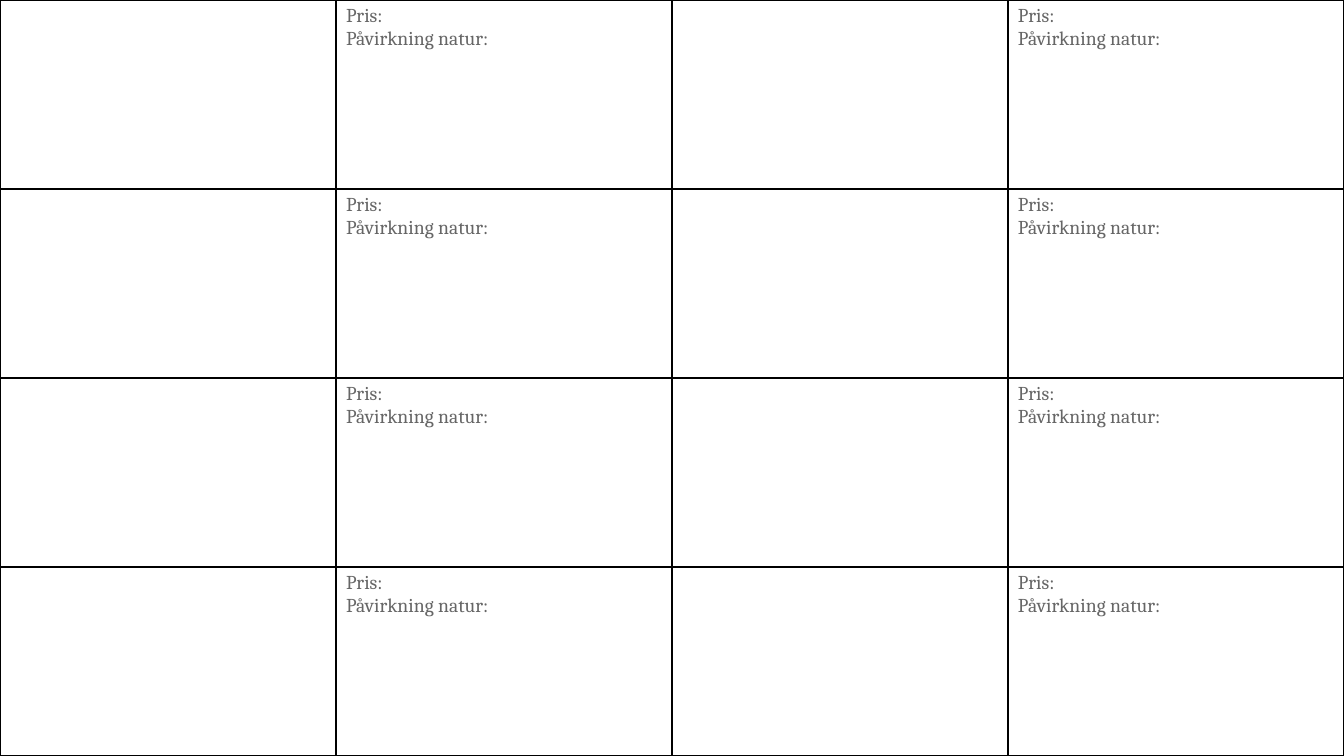
from lxml import etree
from pptx import Presentation
from pptx.dml.color import RGBColor
from pptx.oxml.ns import qn
from pptx.util import Emu, Pt

LABELS = ["Pris:", "Påvirkning natur:"]
ROWS = 4
COLUMNS = 4
LABEL_COLUMNS = (1, 3)

PAGE_WIDTH, PAGE_HEIGHT = 1344, 756
FONT = "Cambria"
FONT_SIZE = Pt(14)
BORDER_WIDTH = Pt(1)
GREY = RGBColor(0x66, 0x66, 0x66)
BLACK = RGBColor(0, 0, 0)
BLANK_LAYOUT = 6


def px(length):
    return Emu(round(length * 914400 / 100.8))


def add_borders(cell):
    properties = cell._tc.get_or_add_tcPr()
    for side in ("a:lnL", "a:lnR", "a:lnT", "a:lnB"):
        line = etree.SubElement(properties, qn(side), w=str(BORDER_WIDTH))
        fill = etree.SubElement(line, qn("a:solidFill"))
        etree.SubElement(fill, qn("a:srgbClr"), val=str(BLACK))


def write_labels(cell):
    cell.text_frame.text = "\n".join(LABELS)
    for para in cell.text_frame.paragraphs:
        for span in para.runs:
            span.font.name = FONT
            span.font.size = FONT_SIZE
            span.font.color.rgb = GREY


def main():
    deck = Presentation()
    deck.slide_width, deck.slide_height = px(PAGE_WIDTH), px(PAGE_HEIGHT)
    page = deck.slides.add_slide(deck.slide_layouts[BLANK_LAYOUT])

    table = page.shapes.add_table(
        ROWS, COLUMNS, 0, 0, px(PAGE_WIDTH), px(PAGE_HEIGHT)
    ).table
    table.first_row = False
    table.horz_banding = False
    for column in table.columns:
        column.width = px(PAGE_WIDTH // COLUMNS)
    for row in table.rows:
        row.height = px(PAGE_HEIGHT // ROWS)
        for index, cell in enumerate(row.cells):
            add_borders(cell)
            cell.fill.background()
            if index in LABEL_COLUMNS:
                write_labels(cell)

    deck.save("out.pptx")


if __name__ == "__main__":
    main()
